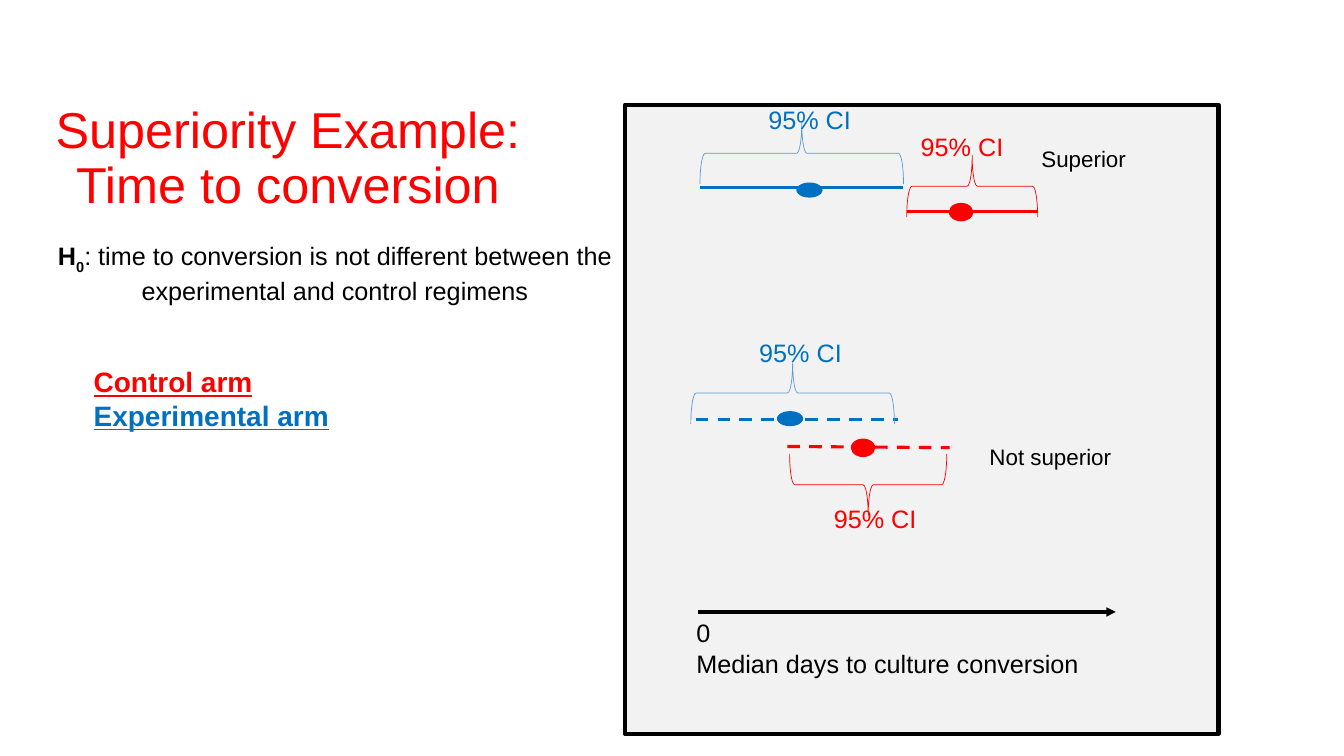
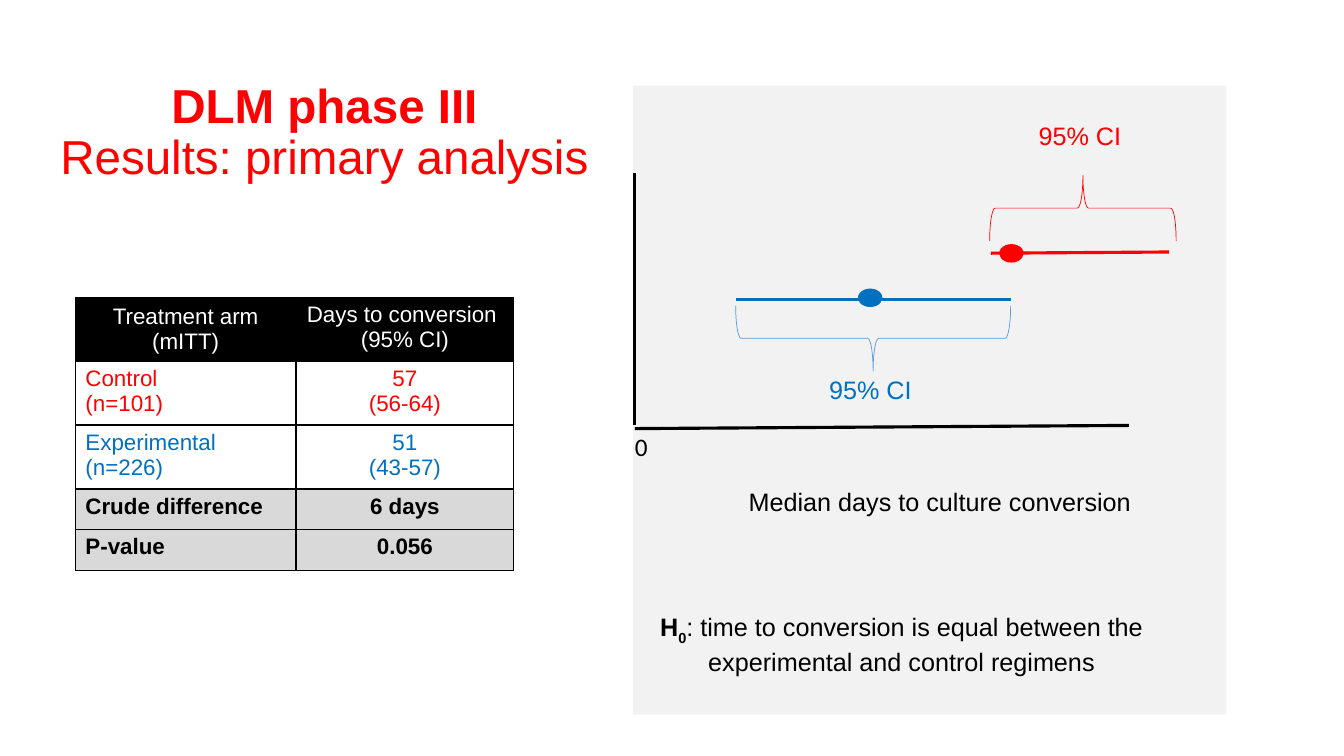
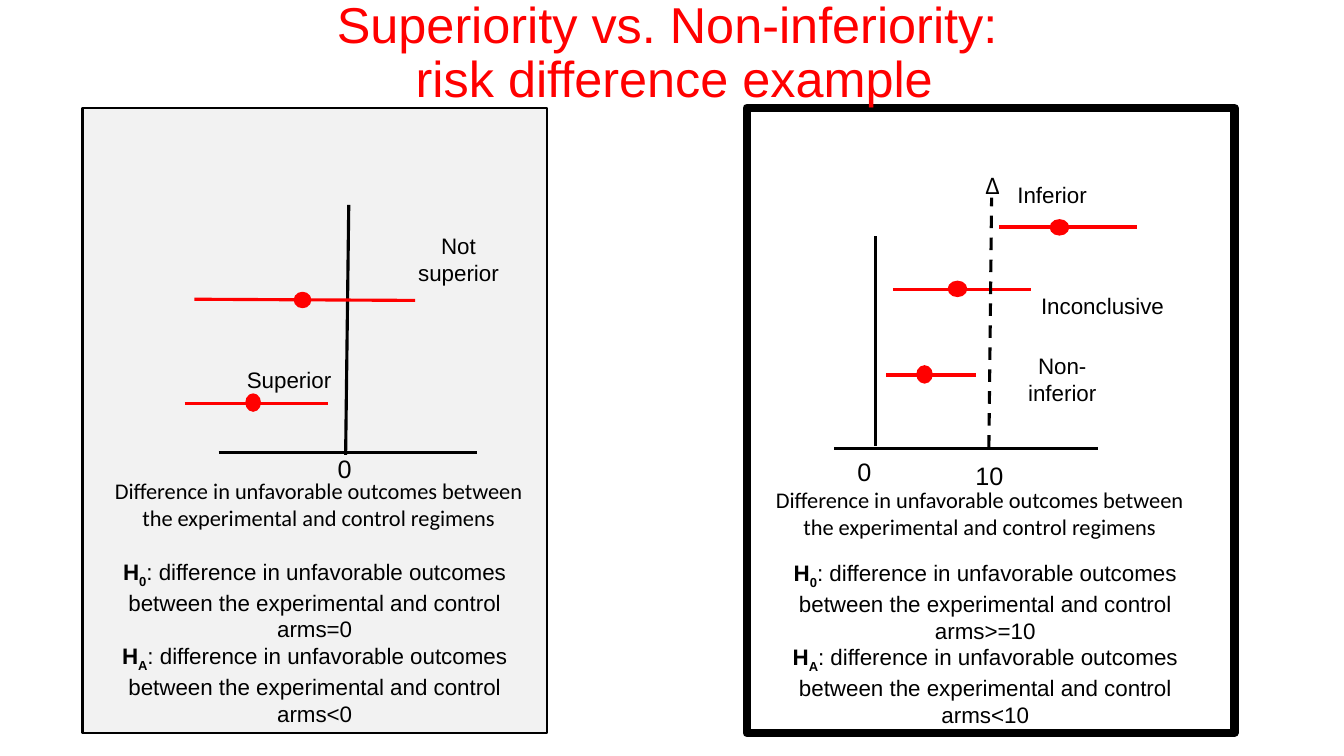
from lxml.etree import SubElement
from pptx import Presentation
from pptx.dml.color import RGBColor
from pptx.enum.dml import MSO_LINE
from pptx.enum.shapes import MSO_CONNECTOR, MSO_SHAPE
from pptx.enum.text import MSO_ANCHOR, MSO_AUTO_SIZE, PP_ALIGN
from pptx.oxml.ns import qn
from pptx.util import Cm, Pt

BLACK = RGBColor(0x00, 0x00, 0x00)
WHITE = RGBColor(0xFF, 0xFF, 0xFF)
RED = RGBColor(0xFF, 0x00, 0x00)
BLUE = RGBColor(0x00, 0x70, 0xC0)
SKY = RGBColor(0x5B, 0x9B, 0xD5)
PALE = RGBColor(0xF2, 0xF2, 0xF2)
GREY = RGBColor(0xD9, 0xD9, 0xD9)
BRACE = {RED: RED, BLUE: SKY}
LEFT, CENTER = PP_ALIGN.LEFT, PP_ALIGN.CENTER
BASE = {"name": "Arial", "size": Pt(18)}
SMALL = {"size": Pt(16)}
CALIBRI = {"name": "Calibri"}
BOLD = {"bold": True}


def claim(sub, rest):
    """Return the runs of a hypothesis with its subscript."""
    return [("H", BOLD), (sub, {**BOLD, "sub": True}), (": " + rest, {})]


class Deck:
    """Hold the style and the current slide."""

    def __init__(self):
        self.prs = Presentation()
        self.prs.slide_width, self.prs.slide_height = Cm(33.87), Cm(19.05)

    def page(self):
        """Start a blank slide."""
        self.slide = self.prs.slides.add_slide(self.prs.slide_layouts[6])
        self.shapes = self.slide.shapes

    def typeset(self, frame, paras, color, align, fmt):
        """Fill a text frame with paragraphs of runs."""
        for num, para in enumerate(paras):
            block = frame.paragraphs[0] if num == 0 else frame.add_paragraph()
            block.alignment = align
            for words, extra in [(para, {})] if isinstance(para, str) else para:
                run = block.add_run()
                run.text = words
                look = {**BASE, "color": color, **fmt, **extra}
                run.font.color.rgb = look.pop("color")
                if look.pop("sub", False):
                    run.font._element.set("baseline", "-25000")
                for key, value in look.items():
                    setattr(run.font, key, value)

    def text(self, box, paras, color=BLACK, align=CENTER, fill=None, fmt=BASE):
        """Add a text box that grows with its text."""
        shape = self.shapes.add_textbox(*map(Cm, box))
        if fill is not None:
            shape.fill.solid()
            shape.fill.fore_color.rgb = fill
        frame = shape.text_frame
        frame.word_wrap = True
        frame.auto_size = MSO_AUTO_SIZE.SHAPE_TO_FIT_TEXT
        self.typeset(frame, paras, color, align, fmt)
        return frame

    def title(self, box, paras, size=36):
        """Add a red slide title."""
        frame = self.text(box, paras, RED, fmt={"size": Pt(size)})
        frame.auto_size = MSO_AUTO_SIZE.NONE
        frame.vertical_anchor = MSO_ANCHOR.MIDDLE
        for block in frame.paragraphs:
            block.line_spacing = 0.9

    def shape(self, kind, box, fill=None, line=None, width=1):
        """Add a preset shape."""
        shape = self.shapes.add_shape(kind, *map(Cm, box))
        shape.shadow.inherit = False
        for part, color in ((shape.fill, fill), (shape.line.fill, line)):
            if color is None:
                part.background()
            else:
                part.solid()
                part.fore_color.rgb = color
        if line is not None:
            shape.line.width = Pt(width)
        return shape

    def panel(self, box, fill=PALE, line=None, width=1):
        """Add a chart panel."""
        self.shape(MSO_SHAPE.RECTANGLE, box, fill, line, width)

    def line(self, ends, color=BLACK, dash=False, arrow=False):
        """Add a straight line."""
        rule = self.shapes.add_connector(MSO_CONNECTOR.STRAIGHT, *map(Cm, ends))
        rule.line.color.rgb = color
        rule.line.width = Pt(2.25)
        if dash:
            rule.line.dash_style = MSO_LINE.DASH
        if arrow:
            SubElement(rule.line._get_or_add_ln(), qn("a:tailEnd"), type="triangle")
        SubElement(rule._element.spPr, qn("a:effectLst"))

    def span(self, color, bar, dot, dash=False, edge=True):
        """Add an interval bar with its estimate."""
        self.line(bar, color, dash)
        self.shape(MSO_SHAPE.OVAL, dot, color, color if edge else None)

    def brace(self, color, box, label, down=False):
        """Add a flat brace and its label."""
        x, y, w, h = box
        turned = (x + (w - h) / 2, y + (h - w) / 2, h, w)
        shape = self.shape(MSO_SHAPE.LEFT_BRACE, turned, None, BRACE[color], 0.5)
        shape.rotation = 270 if down else 90
        self.text(label, ["95% CI"], color)

    def table(self, spot, cols, rows):
        """Add a bordered table from row records."""
        size = (sum(cols), sum(row[0] for row in rows))
        grid = self.shapes.add_table(len(rows), len(cols), *map(Cm, spot + size)).table
        grid.first_row = grid.horz_banding = False
        for col, width in zip(grid.columns, cols):
            col.width = Cm(width)
        for r, (height, fill, color, fmt, cells) in enumerate(rows):
            grid.rows[r].height = Cm(height)
            for c, words in enumerate(cells):
                cell = grid.cell(r, c)
                self.border(cell)
                if fill is None:
                    cell.fill.background()
                else:
                    cell.fill.solid()
                    cell.fill.fore_color.rgb = fill
                align = CENTER if c or r == 0 else LEFT
                self.typeset(cell.text_frame, words.split("\n"), color, align, fmt)
        grid.cell(0, 0).vertical_anchor = MSO_ANCHOR.MIDDLE

    def border(self, cell):
        """Draw the four edges of a cell."""
        props = cell._tc.get_or_add_tcPr()
        for side in ("lnL", "lnR", "lnT", "lnB"):
            edge = SubElement(props, qn("a:" + side), w=str(Pt(1)))
            fill = SubElement(edge, qn("a:solidFill"))
            SubElement(fill, qn("a:srgbClr"), val=str(BLACK))


def example(deck):
    """Build the superiority example."""
    deck.page()
    deck.title((0.81, 2.66, 12.9, 2.72), ["Superiority Example: Time to conversion"])
    deck.panel((15.75, 2.64, 14.96, 15.85), line=BLACK, width=3)
    deck.text((1.14, 5.94, 14.6, 1.8), [claim("0", "time to conversion is not different "
              "between the experimental and control regimens")])
    deck.line((17.6, 15.42, 28.12, 15.42), arrow=True)
    deck.text((17.3, 15.44, 12.85, 1.8), ["0", "Median days to culture conversion"], align=LEFT)
    deck.text((2.11, 9.07, 11.4, 1.96),
              [[("Control arm", {"color": RED})], [("Experimental arm", {"color": BLUE})]],
              align=LEFT, fmt={"size": Pt(20), "bold": True, "underline": True})
    for x, y, word in ((23.75, 11.05, "Not superior"), (24.59, 3.53, "Superior")):
        deck.text((x, y, 5.44, 0.94), [word], fmt=SMALL)
    for color, bar, spot, dash in (
        (BLUE, (17.65, 4.72, 22.76, 4.72), (20.07, 4.6), False),
        (RED, (22.86, 5.33, 26.16, 5.33), (23.93, 5.13), False),
        (BLUE, (17.53, 10.57, 22.63, 10.57), (19.58, 10.36), True),
        (RED, (19.84, 11.25, 23.93, 11.28), (21.46, 11.07), True),
    ):
        size = (0.66, 0.38) if color == BLUE else (0.58, 0.43)
        deck.span(color, bar, spot + size, dash, color == RED)
    for color, x, y, w, label, down in (
        (BLUE, 17.64, 3.09, 5.13, (14.07, 2.51, 12.67, 1.02), False),
        (BLUE, 17.41, 9.13, 5.13, (13.84, 8.38, 12.67, 1.02), False),
        (RED, 22.85, 3.92, 3.3, (20.17, 3.18, 8.15, 1.02), False),
        (RED, 19.9, 11.44, 3.96, (17.98, 12.57, 8.15, 1.02), True),
    ):
        deck.brace(color, (x, y, w, 1.55), label, down)


def results(deck):
    """Build the primary analysis."""
    deck.page()
    deck.title((0.89, 2.01, 14.58, 2.72),
               [[("DLM phase III", BOLD)], "Results: primary analysis"], 34)
    deck.panel((15.95, 2.16, 14.96, 15.85))
    deck.line((16, 10.72, 16, 4.37))
    deck.line((16, 10.8, 28.45, 10.72))
    deck.text((17.35, 12.12, 12.67, 1.02), ["Median days to culture conversion"])
    deck.text((15.75, 10.74, 0.81, 1.02), ["0"], align=LEFT, fmt=CALIBRI)
    deck.text((15.42, 15.29, 14.6, 1.8), [claim("0", "time to conversion is equal "
              "between the experimental and control regimens")])
    deck.span(RED, (24.97, 6.38, 29.46, 6.35), (25.2, 6.17, 0.58, 0.43))
    deck.span(BLUE, (18.54, 7.54, 25.48, 7.54), (21.64, 7.29, 0.58, 0.43))
    deck.brace(RED, (24.94, 4.42, 4.7, 1.65), (20.88, 2.9, 12.67, 1.02))
    deck.brace(BLUE, (18.54, 7.7, 6.93, 1.65), (15.6, 9.32, 12.67, 1.02), True)
    strong = {**SMALL, **BOLD}
    deck.table((1.9, 7.49), (5.56, 5.49), (
        (1.61, BLACK, WHITE, SMALL, ("Treatment arm\n(mITT)", "Days to conversion \n(95% CI)")),
        (1.61, None, RED, SMALL, ("Control\n(n=101)", "57\n(56-64)")),
        (1.61, None, BLUE, SMALL, ("Experimental (n=226)", "51\n(43-57)")),
        (1.03, GREY, BLACK, strong, ("Crude difference", "6 days")),
        (1.03, GREY, BLACK, strong, ("P-value", "0.056")),
    ))


def versus(deck):
    """Build the risk difference comparison."""
    deck.page()
    deck.panel((18.82, 2.72, 12.29, 15.75), WHITE, BLACK, 6)
    deck.title((2.39, 0, 29.21, 2.72),
               ["Superiority vs. Non-inferiority: ", "risk difference example"])
    deck.panel((2.08, 2.72, 11.71, 15.75), PALE, BLACK, 1.5)
    arms = "difference in unfavorable outcomes between the experimental and control "
    for box, note, fill, null, other in (
        ((2.29, 13.94, 11.28, 4.32), (2.39, 11.91), PALE, "=0", "<0"),
        ((19.51, 13.97, 10.64, 4.37), (19.05, 12.12), WHITE, ">=10", "<10"),
    ):
        deck.text(box, [claim("0", arms + "arms" + null), claim("A", arms + "arms" + other)],
                  fill=fill, fmt=SMALL)
        deck.text(note + (11.28, 1.63), [arms.capitalize() + "regimens"],
                  fill=fill, fmt={**SMALL, **CALIBRI})
    for ends in ((8.71, 11.46, 8.79, 5.16), (5.51, 11.4, 12.01, 11.4),
                 (21.03, 11.3, 27.66, 11.3), (22.07, 11.23, 22.07, 5.94)):
        deck.line(ends)
    for x, y, w, word in ((8.26, 11.3, 3.94, "0"), (24.33, 11.48, 1.27, "10"),
                          (21.36, 11.38, 1.45, "0")):
        deck.text((x, y, w, 1.02), [word], align=LEFT)
    for box, word in (
        ((9.88, 5.72, 3.35, 1.63), "Not superior"),
        ((5.61, 9.09, 3.35, 0.94), "Superior"),
        ((25.35, 8.76, 2.84, 1.63), "Non-inferior"),
        ((24.66, 4.45, 3.71, 0.94), "Inferior"),
        ((25.93, 7.24, 3.71, 0.94), "Inconclusive"),
    ):
        deck.text(box, [word], fmt=SMALL)
    for bar, dot in (
        ((4.9, 7.54, 10.46, 7.57), (7.42, 7.37, 0.41, 0.38)),
        ((4.65, 10.16, 8.26, 10.16), (6.2, 9.93, 0.36, 0.43)),
        ((22.5, 7.29, 25.98, 7.29), (23.9, 7.09, 0.46, 0.38)),
        ((22.33, 9.45, 24.59, 9.45), (23.11, 9.22, 0.38, 0.43)),
        ((25.17, 5.72, 28.65, 5.72), (26.47, 5.54, 0.46, 0.38)),
    ):
        deck.span(RED, bar, dot)
    deck.line((24.92, 11.28, 24.99, 4.98), dash=True)
    deck.text((24.59, 4.14, 0.76, 1.02), ["∆"], align=LEFT, fmt=CALIBRI)


def main():
    """Build and save the deck."""
    deck = Deck()
    for build in (example, results, versus):
        build(deck)
    deck.prs.save("out.pptx")


if __name__ == "__main__":
    main()
